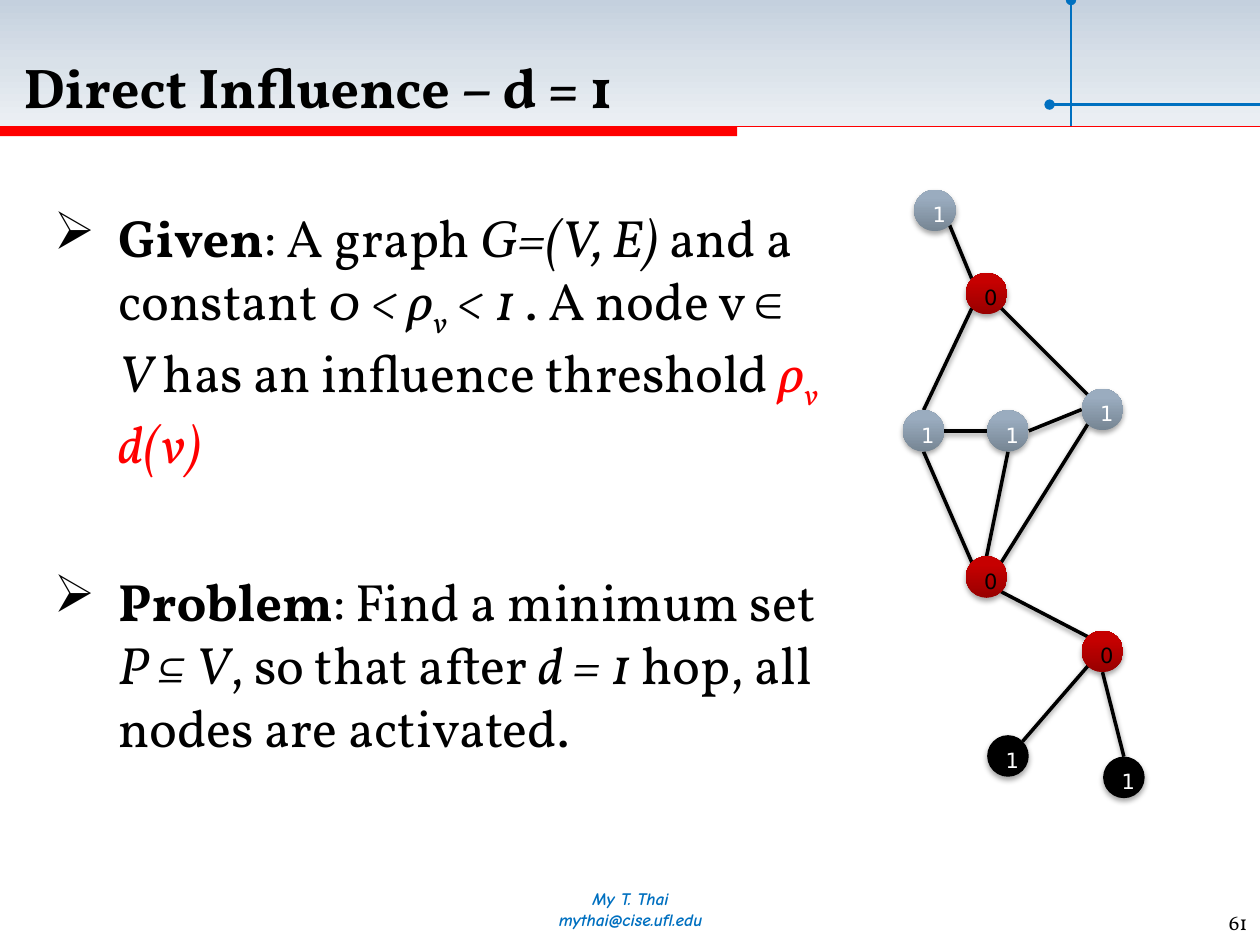
"""Builds the slide on direct influence with one hop."""
from math import cos, radians, sin

from lxml.etree import SubElement
from pptx import Presentation
from pptx.dml.color import RGBColor
from pptx.enum.shapes import MSO_CONNECTOR as Link, MSO_SHAPE as Form
from pptx.enum.text import MSO_ANCHOR as Anchor, PP_ALIGN as Align
from pptx.oxml.ns import qn
from pptx.util import Inches, Pt

BLACK = RGBColor(0, 0, 0)
WHITE = RGBColor(255, 255, 255)
RED = RGBColor(255, 0, 0)
BLUE = RGBColor(0, 0x70, 0xC0)
HEADER = [(0, "C4D0DE"), (50, "D9E1E9"), (100, "ECF0F4")]
STEEL = [(0, "768593"), (80, "9AACBF"), (100, "9AADC1")]
CRIMSON = [(0, "980000"), (80, "C60000"), (100, "C70000")]
DIAMETER = 0.33
TOP, TOP_LEFT, LEFT, BOTTOM_LEFT, BOTTOM, BOTTOM_RIGHT, RIGHT, TOP_RIGHT = range(8)


class Board:
    def __init__(self, slide, font="Vollkorn"):
        self.slide = slide
        self.font = font

    def effects(self, shape, alpha=None):
        effects = SubElement(shape._element.spPr, qn("a:effectLst"))
        if alpha:
            shadow = SubElement(effects, qn("a:outerShdw"), blurRad=str(Pt(3.1)),
                                dist=str(Pt(1.7)), dir="5400000", rotWithShape="0")
            tint = SubElement(shadow, qn("a:srgbClr"), val=str(BLACK))
            SubElement(tint, qn("a:alpha"), val=str(alpha * 1000))

    def paint(self, shape, colour, angle):
        if isinstance(colour, RGBColor):
            shape.fill.solid()
            shape.fill.fore_color.rgb = colour
            return
        shape.fill.gradient()
        shape.fill.gradient_angle = angle
        stops = shape._element.spPr.find(".//" + qn("a:gsLst"))
        stops.clear()
        for position, value in colour:
            stop = SubElement(stops, qn("a:gs"), pos=str(position * 1000))
            SubElement(stop, qn("a:srgbClr"), val=value)

    def shape(self, form, box, colour, angle=90, shadow=None):
        shape = self.slide.shapes.add_shape(form, *map(Inches, box))
        self.paint(shape, colour, angle)
        shape.line.fill.background()
        self.effects(shape, shadow)
        return shape

    def line(self, start, end, colour=BLACK, width=2, shadow=None, dot=False):
        line = self.slide.shapes.add_connector(
            Link.STRAIGHT, *map(Inches, (*start, *end)))
        line.line.color.rgb = colour
        line.line.width = Pt(width)
        if dot:
            SubElement(line.line._get_or_add_ln(), qn("a:headEnd"), type="oval")
        self.effects(line, shadow)

    def run(self, paragraph, text, size, colour=BLACK, bold=False, italic=False,
            font=None, base=0):
        run = paragraph.add_run()
        run.text = text
        run.font.name = font or self.font
        run.font.size = Pt(size)
        run.font.bold = bold
        run.font.italic = italic
        run.font.color.rgb = colour
        if base:
            run.font._element.set("baseline", str(base * 1000))

    def text_box(self, box):
        frame = self.slide.shapes.add_textbox(*map(Inches, box)).text_frame
        frame.word_wrap = True
        return frame

    def bullet(self, paragraph, pieces, before):
        paragraph.space_before = Pt(before)
        props = paragraph._p.get_or_add_pPr()
        props.set("marL", str(Inches(0.51)))
        props.set("indent", str(-Inches(0.51)))
        tint = SubElement(props, qn("a:buClr"))
        SubElement(tint, qn("a:srgbClr"), val=str(BLACK))
        SubElement(props, qn("a:buChar"), char="➢")
        for text, style in pieces:
            self.run(paragraph, text, 30, **style)

    def node(self, centre, label, colour, label_colour):
        x, y = centre
        radius = DIAMETER / 2
        node = self.shape(Form.OVAL, (x - radius, y - radius, DIAMETER, DIAMETER),
                          colour, shadow=35)
        frame = node.text_frame
        frame.vertical_anchor = Anchor.TOP
        frame.paragraphs[0].alignment = Align.LEFT
        self.run(frame.paragraphs[0], label, 12, label_colour, font="DejaVu Sans")


def rim(centre, site):
    angle = radians(90 + 45 * site)
    return (centre[0] + DIAMETER / 2 * cos(angle),
            centre[1] - DIAMETER / 2 * sin(angle))


def main():
    deck = Presentation()
    deck.slide_width, deck.slide_height = Inches(10), Inches(7.5)
    board = Board(deck.slides.add_slide(deck.slide_layouts[6]))

    board.shape(Form.RECTANGLE, (0, 1, 5.85, 0.08), RED)
    board.line((0, 1), (10, 1), RED, 1.5)
    header = board.shape(Form.RECTANGLE, (0, 0, 10, 1), HEADER, 270).text_frame
    header.vertical_anchor = Anchor.BOTTOM
    header.paragraphs[0].alignment = Align.LEFT
    board.run(header.paragraphs[0], " Direct Influence – d = 1", 32, bold=True)

    plain, bold, italic = {}, {"bold": True}, {"italic": True}
    sub = {"italic": True, "base": -25}
    red = {"italic": True, "colour": RED}
    given = [("Given", bold), (": A graph ", plain), ("G=(V, E)", italic),
             (" and a constant ", plain), ("0 < ρ", italic), ("v", sub),
             (" < 1", italic), (" . A node v ∈ ", plain), ("V", italic),
             (" has an influence threshold ", plain), ("ρ", red),
             ("v", {**sub, "colour": RED}), (" d(v)", red)]
    problem = [("Problem", bold), (": Find a minimum set ", plain),
               ("P ⊆ V", italic), (", so that after ", plain),
               ("d = 1", italic), (" hop, all nodes are activated.", plain)]
    body = board.text_box((0.33, 1.58, 6.33, 5.5))
    board.bullet(body.paragraphs[0], given, 6)
    board.bullet(body.add_paragraph(), problem, 54)

    author = board.text_box((3.42, 7, 3.17, 0.52))
    for paragraph, text in ((author.paragraphs[0], "My T. Thai"),
                            (author.add_paragraph(), "mythai@cise.ufl.edu")):
        paragraph.alignment = Align.CENTER
        board.run(paragraph, text, 10, BLUE, True, True, "Comic Neue")
    number = board.text_box((7.83, 7.17, 2.17, 0.52)).paragraphs[0]
    number.alignment = Align.RIGHT
    board.run(number, "61", 12)

    steel, crimson, black = (STEEL, WHITE), (CRIMSON, BLACK), (BLACK, WHITE)
    nodes = {
        "start": ((7.42, 1.67), "1", steel),
        "upper": ((7.83, 2.33), "0", crimson),
        "west": ((7.33, 3.42), "1", steel),
        "middle": ((8, 3.42), "1", steel),
        "east": ((8.75, 3.25), "1", steel),
        "lower": ((7.83, 4.58), "0", crimson),
        "hub": ((8.75, 5.17), "0", crimson),
        "left leaf": ((8, 6), "1", black),
        "right leaf": ((8.92, 6.17), "1", black),
    }
    edges = [
        ("start", BOTTOM_RIGHT, "upper", TOP_LEFT),
        ("upper", BOTTOM_LEFT, "west", TOP),
        ("upper", BOTTOM_RIGHT, "east", TOP_LEFT),
        ("west", RIGHT, "middle", LEFT),
        ("middle", RIGHT, "east", LEFT),
        ("west", BOTTOM, "lower", TOP_LEFT),
        ("middle", BOTTOM, "lower", TOP),
        ("east", BOTTOM_LEFT, "lower", TOP_RIGHT),
        ("lower", BOTTOM_RIGHT, "hub", TOP_LEFT),
        ("hub", BOTTOM_LEFT, "left leaf", TOP_RIGHT),
        ("hub", BOTTOM, "right leaf", TOP),
    ]
    for source, source_site, target, target_site in edges:
        board.line(rim(nodes[source][0], source_site),
                   rim(nodes[target][0], target_site), shadow=38)
    for centre, label, colours in nodes.values():
        board.node(centre, label, *colours)

    board.line((8.5, 0), (8.5, 1), BLUE, 1.5, dot=True)
    board.line((8.33, 0.83), (10, 0.83), BLUE, 1.5, dot=True)
    deck.save("out.pptx")


if __name__ == "__main__":
    main()
